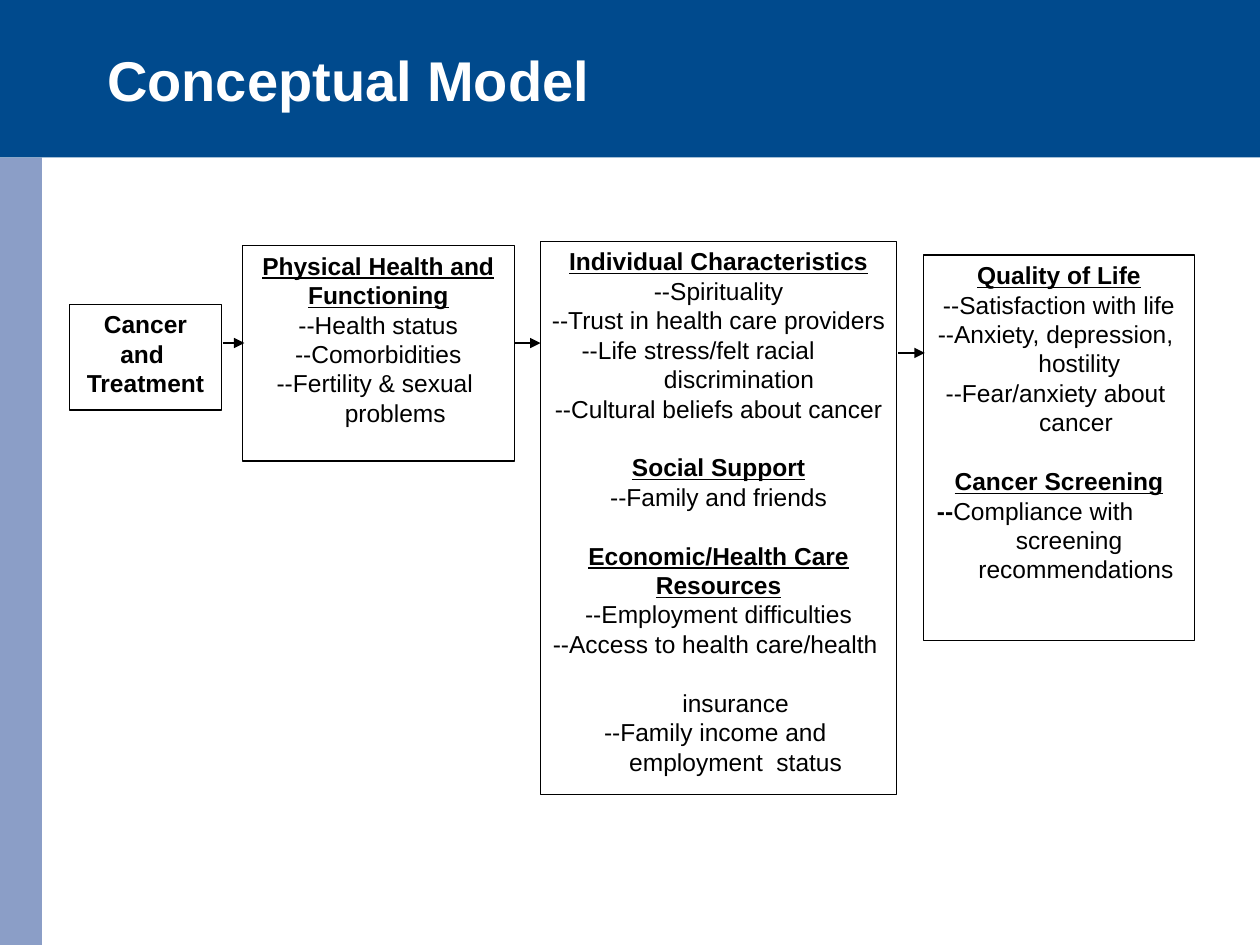
from lxml import etree
from pptx import Presentation, util as u
from pptx.dml.color import RGBColor
from pptx.enum import shapes, text
from pptx.oxml.ns import qn

WIDE, HIGH = u.Inches(10), u.Inches(7.5)
FONT = "Arial"
BLACK, WHITE, NAVY, LILAC = "000000", "FFFFFF", "004A8D", "8B9EC7"
STEP = u.Inches(0.054)  # indent that moves a centred line by half a space
LINE = u.Pt(16.8)

# Each line: text, style (H heading, B bold, "" plain), indent steps, gap before
CAUSE = [("Cancer", "B", 0, 0), ("and", "B", -1, 0), ("Treatment", "B", 0, 0)]
HEALTH = [
    ("Physical Health and Functioning", "H", 0, 0),
    ("--Health status", "", 0, 0),
    ("--Comorbidities", "", 0, 0),
    ("--Fertility & sexual", "", -1, 0),
    ("problems", "", 5, 0),
]
FACTORS = [
    ("Individual Characteristics", "H", 0, 0),
    ("--Spirituality", "", 0, 0),
    ("--Trust in health care providers", "", 0, 0),
    ("--Life stress/felt racial", "", -6, 0),
    ("discrimination", "", 6, 0),
    ("--Cultural beliefs about cancer", "", 0, 0),
    ("Social Support", "H", 0, 1),
    ("--Family and friends", "", 0, 0),
    ("Economic/Health Care Resources", "H", 0, 1),
    ("--Employment difficulties", "", 0, 0),
    ("--Access to health care/health", "", -1, 0),
    ("insurance", "", 5, 1),
    ("--Family income and", "", -1, 0),
    ("employment  status", "", 5, 0),
]
RESULTS = [
    ("Quality of Life", "H", 0, 0),
    ("--Satisfaction with life", "", 0, 0),
    ("--Anxiety, depression,", "", -1, 0),
    ("hostility", "", 6, 0),
    ("--Fear/anxiety about", "", -1, 0),
    ("cancer", "", 5, 0),
    ("Cancer Screening", "H", 0, 1),
    ("--|Compliance with", "", -7, 0),
    ("screening", "", 3, 0),
    ("recommendations", "", 5, 0),
]
# Left, top, width, height in percent of the slide
BOXES = [
    (5.5, 32.2, 12.1, 11.2, CAUSE),
    (19.23, 26, 21.6, 22.8, HEALTH),
    (42.9, 25.55, 28.27, 58.53, FACTORS),
    (73.3, 27, 21.5, 40.8, RESULTS),
]
# Start, end, height in percent of the slide
ARROWS = [(17.7, 19.4, 36.3), (40.8, 42.9, 36.3), (71.3, 73.4, 37.35)]


def rgb(code):
    return RGBColor.from_string(code)


def across(share):
    return u.Emu(round(WIDE * share / 100))


def down(share):
    return u.Emu(round(HIGH * share / 100))


def place(x, y, w, h):
    return across(x), down(y), across(w), down(h)


def style(font, size, color, bold):
    font.name, font.size, font.bold = FONT, u.Pt(size), bold
    font.color.rgb = rgb(color)


def add_rect(slide, *area):
    rect = slide.shapes.add_shape(shapes.MSO_SHAPE.RECTANGLE, *place(*area))
    rect.shadow.inherit = False
    return rect


def add_band(slide, color, *area):
    """Add a plain band behind everything else."""
    band = add_rect(slide, *area)
    band.fill.solid()
    band.fill.fore_color.rgb = rgb(color)
    band.line.fill.background()
    slide.shapes._spTree.insert(2, band._element)


def add_title(slide, words):
    title = slide.shapes.title
    title.left, title.top, title.width, title.height = place(7.5, 0, 85, 16.67)
    frame = title.text_frame
    frame.text = words
    frame.vertical_anchor = text.MSO_ANCHOR.MIDDLE
    para = frame.paragraphs[0]
    para.alignment = text.PP_ALIGN.LEFT
    style(para.runs[0].font, 32, WHITE, True)


def add_line(para, words, kind, shift, gap):
    """Fill one centred line; a part before a bar is bold."""
    para.alignment = text.PP_ALIGN.CENTER
    para.space_before = LINE * gap
    props = para._p.get_or_add_pPr()
    props.set("marL", str(max(shift, 0) * STEP))
    props.set("marR", str(max(-shift, 0) * STEP))
    props.set("indent", "0")
    parts = words.split("|")
    for part in parts:
        run = para.add_run()
        run.text = part
        style(run.font, 14, BLACK, bool(kind) or part != parts[-1])
        run.font.underline = kind == "H"


def add_box(slide, x, y, w, h, lines):
    box = add_rect(slide, x, y, w, h)
    box.fill.background()
    box.line.color.rgb = rgb(BLACK)
    box.line.width = u.Pt(0.75)
    frame = box.text_frame
    frame.word_wrap = True
    frame.vertical_anchor = text.MSO_ANCHOR.TOP
    frame.margin_left = frame.margin_right = u.Inches(0.08)
    frame.margin_top = frame.margin_bottom = u.Inches(0.04)
    for i, line in enumerate(lines):
        para = frame.add_paragraph() if i else frame.paragraphs[0]
        add_line(para, *line)


def add_arrow(slide, start, end, y):
    arrow = slide.shapes.add_connector(
        shapes.MSO_CONNECTOR.STRAIGHT, across(start), down(y), across(end), down(y))
    arrow.line.color.rgb = rgb(BLACK)
    arrow.line.width = u.Pt(0.75)
    etree.SubElement(arrow.line._get_or_add_ln(), qn("a:tailEnd"), type="triangle")
    etree.SubElement(arrow._element.spPr, qn("a:effectLst"))


def main():
    deck = Presentation()
    deck.slide_width, deck.slide_height = WIDE, HIGH
    slide = deck.slides.add_slide(deck.slide_layouts[5])
    add_band(slide, NAVY, 0, 0, 100, 16.67)
    add_band(slide, LILAC, 0, 16.67, 3.33, 83.33)
    add_title(slide, "Conceptual Model")
    for box in BOXES:
        add_box(slide, *box)
    for arrow in ARROWS:
        add_arrow(slide, *arrow)
    deck.save("out.pptx")


if __name__ == "__main__":
    main()
